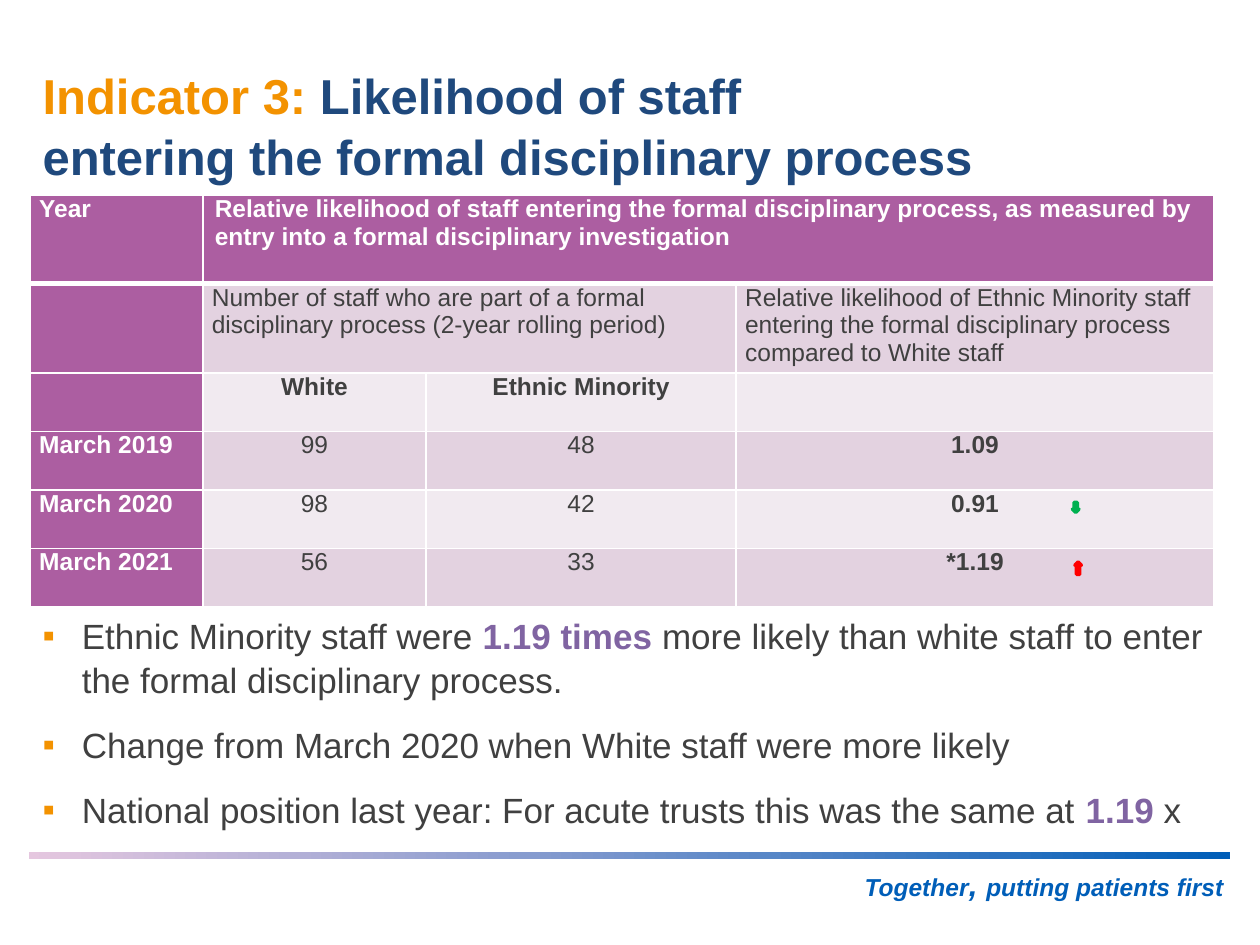
import pptx
import pptx.util
import pptx.dml.color
import pptx.enum.shapes
import pptx.enum.text
import pptx.oxml
import pptx.oxml.ns

Cm, Pt = pptx.util.Cm, pptx.util.Pt
ALIGN = pptx.enum.text.PP_ALIGN
SHAPE = pptx.enum.shapes.MSO_SHAPE

ORANGE, NAVY, BLUE, GREY, VIOLET = "F39200", "1F497D", "005EB8", "404040", "8064A2"
PLUM, BAND, PALE, WHITE = "AC5EA1", "E3D2E0", "F1EAF0", "FFFFFF"

# Content: runs are (text, format)
TITLE = [
    [("Indicator 3: ", {"color": ORANGE}), ("Likelihood of staff", {})],
    [("entering the formal disciplinary process", {})],
]
HEADER = ["Year", "Relative likelihood of staff entering the formal disciplinary process, "
          "as measured by entry into a formal disciplinary investigation", "", ""]
ROWS = [
    HEADER,
    ["", "Number of staff who are part of a formal disciplinary process (2-year rolling period)", "",
     "Relative likelihood of Ethnic Minority staff entering the formal disciplinary process "
     "compared to White staff"],
    ["", "White", "Ethnic Minority", ""],
    ["March 2019", "99", "48", "1.09"],
    ["March 2020", "98", "42", "0.91"],
    ["March 2021", "56", "33", "*1.19"],
]
COL_WIDTHS = [3.48, 4.5, 6.25, 9.63]
ROW_HEIGHTS = [1.78, 1.8] + [1.18] * 4
STRONG = {"color": VIOLET, "bold": True}
BULLETS = [
    [("Ethnic Minority staff were ", {}), ("1.19 times ", STRONG),
     ("more likely than white staff to enter the formal disciplinary process.", {})],
    [("Change from March 2020 when White staff were more likely", {})],
    [("National position last year: For acute trusts this was the same at ", {}),
     ("1.19 ", STRONG), ("x", {})],
]
FOOTER = [("Together", {}), (", ", {"size": 18}), ("putting patients first", {})]
ARROWS = [  # shape, left, top, height, colour
    (SHAPE.DOWN_ARROW, 21.62, 10.13, 0.2, "00B050"),
    (SHAPE.UP_ARROW, 21.67, 11.33, 0.25, "FF0000"),
]


def rgb(value):
    return pptx.dml.color.RGBColor.from_string(value)


def add_text(p, text, size=14, color=GREY, bold=False, italic=False):
    r = p.add_run()
    r.text = text
    r.font.name, r.font.size = "Arial", Pt(size)
    r.font.bold, r.font.italic = bold, italic
    r.font.color.rgb = rgb(color)


def add_runs(p, runs, **base):
    for text, fmt in runs:
        add_text(p, text, **{**base, **fmt})


def add_box(s, left, top, width, height):
    tf = s.shapes.add_textbox(Cm(left), Cm(top), Cm(width), Cm(height)).text_frame
    tf.word_wrap = True
    return tf


def add_bullet(p, char, color):
    pPr = p._p.get_or_add_pPr()
    pPr.set("marL", str(Cm(0.79)))
    pPr.set("indent", str(-Cm(0.79)))
    ns = pptx.oxml.ns.nsdecls("a")
    for xml in (f'<a:buClr {ns}><a:srgbClr val="{color}"/></a:buClr>',
                f'<a:buFont {ns} typeface="Arial"/>',
                f'<a:buChar {ns} char="{char}"/>'):
        pPr.append(pptx.oxml.parse_xml(xml))


def set_borders(cell, **widths):
    tcPr = cell._tc.get_or_add_tcPr()
    for i, side in enumerate("LRTB"):
        tcPr.insert(i, pptx.oxml.parse_xml(
            f'<a:ln{side} {pptx.oxml.ns.nsdecls("a")} w="{Pt(widths.get(side, 1))}">'
            f'<a:solidFill><a:srgbClr val="{WHITE}"/></a:solidFill></a:ln{side}>'))


prs = pptx.Presentation()
prs.slide_width, prs.slide_height = Cm(25.4), Cm(19.05)
s = prs.slides.add_slide(prs.slide_layouts[6])

# Footer line and motto
sp = s.shapes.add_shape(SHAPE.RECTANGLE, Cm(0.58), Cm(17.17), Cm(24.21), Cm(0.15))
sp.shadow.inherit = False
sp.line.fill.background()
sp.fill.gradient()
sp.fill.gradient_angle = 0
for stop, color in zip(sp.fill.gradient_stops, ("E5C7DF", BLUE)):
    stop.color.rgb = rgb(color)
p = add_box(s, 16.87, 17.32, 8.05, 1.02).paragraphs[0]
p.alignment = ALIGN.RIGHT
add_runs(p, FOOTER, color=BLUE, bold=True, italic=True)

# Title
tf = add_box(s, 0.61, 0.91, 19.89, 3.18)
tf.vertical_anchor = pptx.enum.text.MSO_ANCHOR.MIDDLE
p = tf.paragraphs[0]
p.line_spacing = 1.05
for i, line in enumerate(TITLE):
    if i:
        p.add_line_break()
    add_runs(p, line, size=28, color=NAVY, bold=True)

# Bullets
tf = add_box(s, 0.61, 12.22, 24.28, 6.83)
for i, runs in enumerate(BULLETS):
    p = tf.paragraphs[0] if i == 0 else tf.add_paragraph()
    p.line_spacing = 1.05
    if i:
        p.space_before = Pt(12)
    add_bullet(p, "▪", ORANGE)
    add_runs(p, runs, size=20)

# Table
table = s.shapes.add_table(len(ROWS), len(COL_WIDTHS), Cm(0.61), Cm(3.94),
                           Cm(sum(COL_WIDTHS)), Cm(sum(ROW_HEIGHTS))).table
for col, width in zip(table.columns, COL_WIDTHS):
    col.width = Cm(width)
for row, height in zip(table.rows, ROW_HEIGHTS):
    row.height = Cm(height)
table.cell(0, 1).merge(table.cell(0, 3))
table.cell(1, 1).merge(table.cell(1, 2))
for i, row in enumerate(ROWS):
    for j, text in enumerate(row):
        cell = table.cell(i, j)
        head = i == 0 or j == 0
        set_borders(cell, B=3 if i == 0 else 1, T=3 if i == 1 else 1)
        cell.fill.solid()
        cell.fill.fore_color.rgb = rgb(PLUM if head else BAND if i % 2 else PALE)
        cell.margin_left = Cm(0.24 if (i, j) == (0, 1) else 0.18)
        cell.margin_right = Cm(0.18)
        cell.margin_top = cell.margin_bottom = 0
        if text:
            p = cell.text_frame.paragraphs[0]
            p.alignment = ALIGN.CENTER if i > 1 and j else ALIGN.LEFT
            add_text(p, text, color=WHITE if head else GREY,
                     bold=head or i == 2 or (i > 2 and j == 3))

# Trend arrows
for shape, left, top, height, color in ARROWS:
    sp = s.shapes.add_shape(shape, Cm(left), Cm(top), Cm(0.13), Cm(height))
    sp.shadow.inherit = False
    sp.fill.solid()
    sp.fill.fore_color.rgb = sp.line.color.rgb = rgb(color)
    sp.line.width = Pt(2)

prs.save("out.pptx")
